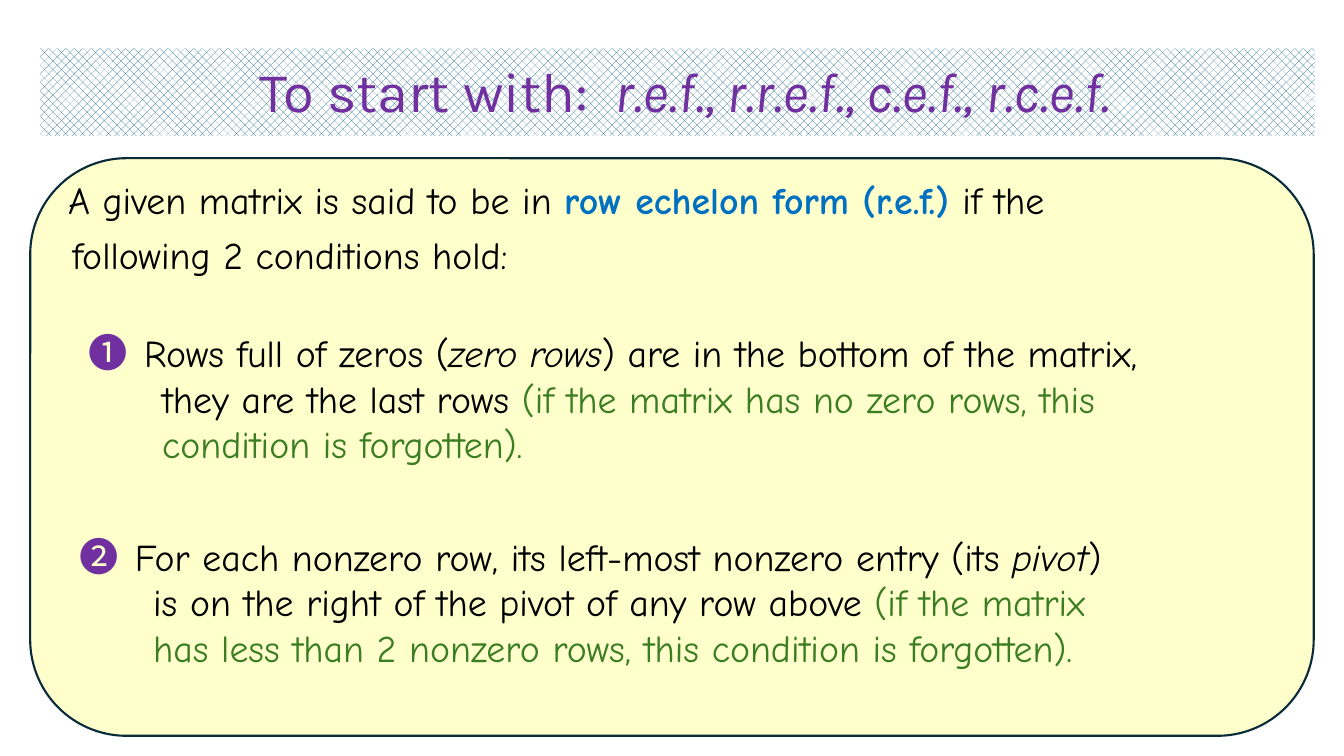
"""Build the slide that defines row echelon form."""
from pptx import Presentation
from pptx.dml.color import RGBColor
from pptx.enum.dml import MSO_PATTERN
from pptx.enum.shapes import MSO_SHAPE
from pptx.enum.text import MSO_ANCHOR, PP_ALIGN
from pptx.util import Inches, Pt

ROUNDED, RECTANGLE = MSO_SHAPE.ROUNDED_RECTANGLE, MSO_SHAPE.RECTANGLE
WEAVE = MSO_PATTERN.WEAVE
MIDDLE, CENTER = MSO_ANCHOR.MIDDLE, PP_ALIGN.CENTER
PURPLE, GREEN, BLUE, BLACK = "7030A0", "3B7D23", "0070C0", "000000"
MARK = ("Noto Sans CJK JP", 28, PURPLE, False, False)
PLAIN = ("Comic Neue", 27, BLACK, False, False)
ITALIC = ("Comic Neue", 27, BLACK, False, True)
TERM = ("Comic Neue", 27, BLUE, True, False)
REMARK = ("Comic Neue", 27, GREEN, False, False)


def rgb(value):
    return RGBColor.from_string(value)


def write_lines(frame, lines):
    """Fill a frame with lines of (margin, indent, runs)."""
    frame.word_wrap = True
    for number, (margin, indent, runs) in enumerate(lines):
        line = frame.add_paragraph() if number else frame.paragraphs[0]
        properties = line._p.get_or_add_pPr()
        properties.set("marL", str(Inches(margin)))
        properties.set("indent", str(Inches(indent)))
        for text, (face, size, color, bold, italic) in runs:
            run = line.add_run()
            run.text = text
            run.font.name, run.font.size = face, Pt(size)
            run.font.bold, run.font.italic = bold, italic
            run.font.color.rgb = rgb(color)


prs = Presentation()
prs.slide_width, prs.slide_height = Inches(13.33), Inches(7.5)
slide = prs.slides.add_slide(prs.slide_layouts[6])
shapes = slide.shapes

panel = shapes.add_shape(ROUNDED, Inches(0.3), Inches(1.57), Inches(12.73), Inches(5.73))
panel.shadow.inherit = False
panel.fill.solid()
panel.fill.fore_color.rgb = rgb("FFFFCC")
panel.line.color.rgb = rgb("092A39")
panel.line.width = Pt(1.5)

definition = shapes.add_textbox(Inches(0.4), Inches(1.74), Inches(12.64), Inches(2.48))
write_lines(definition.text_frame, [
    (0.09, 0, [(" ", MARK), ("A given matrix is said to be in ", PLAIN),
               ("row echelon form (r.e.f.) ", TERM), ("if the", PLAIN)]),
    (0.22, 0, [("following 2 conditions hold:", PLAIN)]),
])
for line in definition.text_frame.paragraphs:
    line.line_spacing = 0.9
    line.space_before = Pt(10)

conditions = [
    (0.78, 3.21, 12.08, 1.48, [
        [("➊\t", MARK), ("Rows full of zeros (", PLAIN), ("zero rows", ITALIC),
         (") are in the bottom of the matrix,", PLAIN)],
        [("they are the last rows ", PLAIN),
         ("(if the matrix has no zero rows, this", REMARK)],
        [("condition is forgotten).", REMARK)],
    ]),
    (0.69, 5.23, 11.78, 2.26, [
        [("➋\t", MARK),
         ("For each nonzero row, its left-most nonzero entry (its ", PLAIN),
         ("pivot", ITALIC), (")", PLAIN)],
        [("is on the right of the pivot of any row above ", PLAIN),
         ("(if the matrix", REMARK)],
        [("has less than 2 nonzero rows, this condition is forgotten).", REMARK)],
    ]),
]
for left, top, width, height, (opening, *rest) in conditions:
    condition = shapes.add_textbox(Inches(left), Inches(top), Inches(width), Inches(height))
    write_lines(condition.text_frame,
                [(0.55, -0.55, opening)] + [(0.73, 0, runs) for runs in rest])

title = shapes.add_shape(RECTANGLE, Inches(0.4), Inches(0.48), Inches(12.64), Inches(0.87))
title.shadow.inherit = False
title.fill.patterned()
title.fill.pattern = WEAVE
title.fill.fore_color.rgb = rgb("156082")
title.fill.back_color.rgb = rgb("FFFFFF")
title.line.fill.background()
title.text_frame.vertical_anchor = MIDDLE
write_lines(title.text_frame, [(0, 0, [
    (" ", ("Karla", 44, PURPLE, False, False)),
    ("To start with:  ", ("Karla", 40, PURPLE, False, False)),
    ("r.e.f., r.r.e.f., c.e.f., r.c.e.f.", ("Karla", 40, PURPLE, False, True)),
])])
heading = title.text_frame.paragraphs[0]
heading.alignment = CENTER
heading.line_spacing = 0.9

prs.save("out.pptx")
